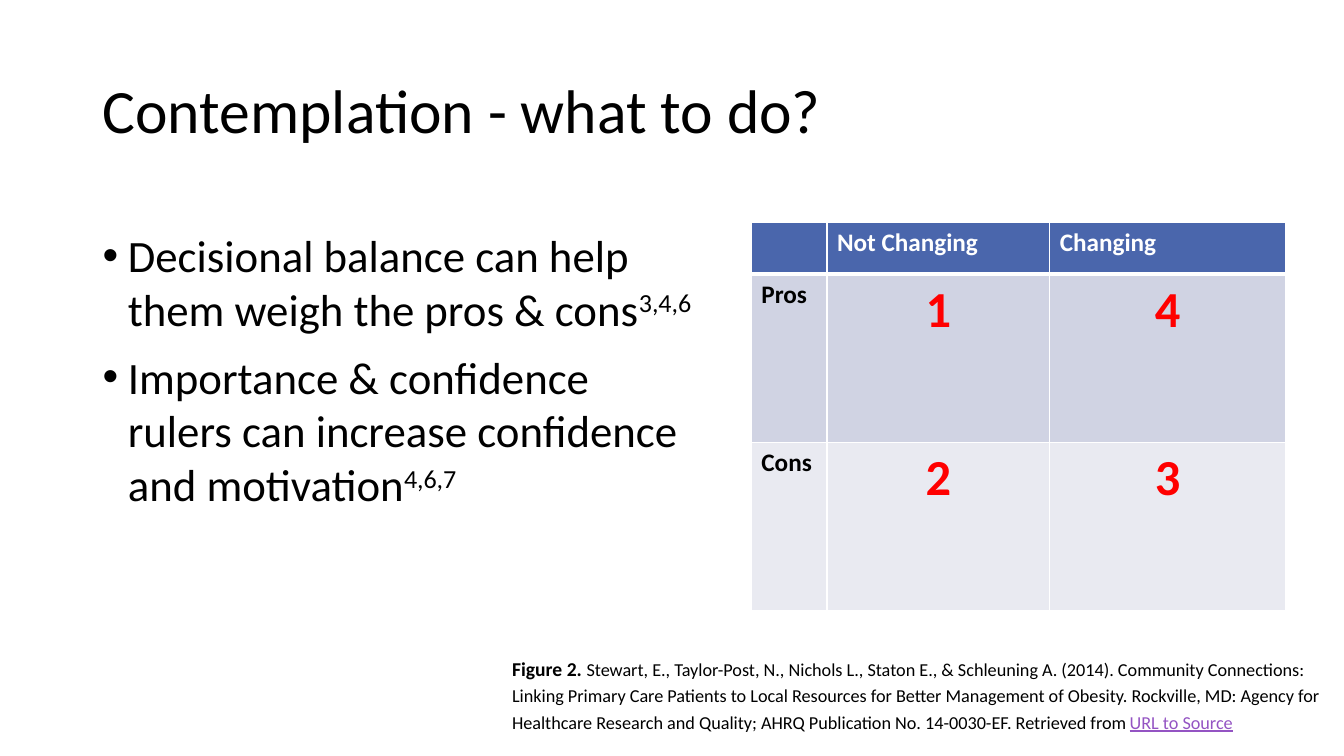
import pptx
import pptx.util
import pptx.dml.color
import pptx.enum.text
import pptx.oxml
import pptx.oxml.ns
from lxml import etree

# Content: paragraphs are lists of (text, style) spans
TITLE = [[("Contemplation - what to do?", "title")]]
ADVICE = [
    [("Decisional balance can help them weigh the pros & cons", "body"), ("3,4,6", "reference")],
    [("Importance & confidence rulers can increase confidence and motivation", "body"),
     ("4,6,7", "reference")],
]
CAPTION = [[
    ("Figure 2. ", "figure"),
    ("Stewart, E., Taylor-Post, N., Nichols L., Staton E., & Schleuning A. (2014). "
     "Community Connections: Linking Primary Care Patients to Local Resources for Better "
     "Management of Obesity. Rockville, MD: Agency for Healthcare Research and Quality; "
     "AHRQ Publication No. 14-0030-EF. Retrieved from ", "caption"),
    ("URL to Source", "source"),
]]
BALANCE = [
    ["", "Not Changing", "Changing"],
    ["Pros", "1", "4"],
    ["Cons", "2", "3"],
]

# Theme: font formats by style, and table colours
THEME = {
    "font": "Calibri",
    "styles": {
        "title": {"size": 44, "color": "000000"},
        "body": {"size": 32, "color": "000000"},
        "reference": {"size": 32, "color": "000000", "baseline": 30},
        "figure": {"size": 14, "color": "000000", "bold": True},
        "caption": {"size": 13, "color": "000000"},
        "source": {"size": 13, "color": "9454C3", "underline": True},
        "header": {"size": 18, "color": "FFFFFF", "bold": True},
        "label": {"size": 18, "color": "000000", "bold": True},
        "rank": {"size": 36, "color": "FF0000", "bold": True},
    },
    "row_fills": ["4A66AC", "D0D3E3", "E9EAF1"],
    "border": "FFFFFF",
}

# Layout: left, top, width, height as percent of the slide
WIDTH, HEIGHT = pptx.util.Inches(13.33), pptx.util.Inches(7.5)
AREAS = {
    "title": (6.9, 5.33, 86.25, 19.33),
    "advice": (6.9, 29.47, 45.9, 60.67),
    "balance": (55.9, 29.47, 39.76, 51.33),
    "caption": (37.36, 85.6, 62.64, 13.33),
}
COLUMN_WEIGHTS = (0.75, 2.21, 2.34)
ROW_WEIGHTS = (0.51, 1.67, 1.67)
BULLET_INDENT = pptx.util.Inches(0.25)
ANCHOR = pptx.enum.text.MSO_ANCHOR
ALIGN = pptx.enum.text.PP_ALIGN


def area(name):
    return [int(side * share / 100)
            for side, share in zip((WIDTH, HEIGHT) * 2, AREAS[name])]


def rgb(value):
    return pptx.dml.color.RGBColor.from_string(value)


def add_span(para, text, style):
    span = para.add_run()
    span.text = text
    look = THEME["styles"][style]
    formats = {
        "name": THEME["font"],
        "size": pptx.util.Pt(look["size"]),
        "bold": look.get("bold", False),
        "underline": look.get("underline", False),
    }
    for key, value in formats.items():
        setattr(span.font, key, value)
    span.font.color.rgb = rgb(look["color"])
    if "baseline" in look:
        span.font._element.set("baseline", str(look["baseline"] * 1000))


def add_bullet(para):
    properties = para._p.get_or_add_pPr()
    properties.set("marL", str(BULLET_INDENT))
    properties.set("indent", str(-BULLET_INDENT))
    etree.SubElement(properties, pptx.oxml.ns.qn("a:buFont")).set("typeface", "Arial")
    etree.SubElement(properties, pptx.oxml.ns.qn("a:buChar")).set("char", "•")


def add_text(page, name, paragraphs, anchor=ANCHOR.TOP, spacing=1.0, bulleted=False):
    frame = page.shapes.add_textbox(*area(name)).text_frame
    frame.word_wrap = True
    frame.vertical_anchor = anchor
    for index, spans in enumerate(paragraphs):
        para = frame.add_paragraph() if index else frame.paragraphs[0]
        if bulleted:
            add_bullet(para)
        para.line_spacing = spacing
        if index:
            para.space_before = pptx.util.Pt(10)
        for text, style in spans:
            add_span(para, text, style)


def set_borders(cell, widths):
    properties = cell._tc.get_or_add_tcPr()
    for position, (side, width) in enumerate(widths.items()):
        properties.insert(position, pptx.oxml.parse_xml(
            f'<a:ln{side} {pptx.oxml.ns.nsdecls("a")} w="{pptx.util.Pt(width)}">'
            f'<a:solidFill><a:srgbClr val="{THEME["border"]}"/></a:solidFill></a:ln{side}>'))


def add_balance(page):
    left, top, width, height = area("balance")
    table = page.shapes.add_table(
        len(BALANCE), len(BALANCE[0]), left, top, width, height).table
    for column, weight in zip(table.columns, COLUMN_WEIGHTS):
        column.width = int(width * weight / sum(COLUMN_WEIGHTS))
    for row, weight in zip(table.rows, ROW_WEIGHTS):
        row.height = int(height * weight / sum(ROW_WEIGHTS))
    for r, texts in enumerate(BALANCE):
        for c, text in enumerate(texts):
            cell = table.cell(r, c)
            cell.fill.solid()
            cell.fill.fore_color.rgb = rgb(THEME["row_fills"][r])
            # The rule under the header row is heavier
            set_borders(cell, {"L": 1, "R": 1, "T": 3 if r == 1 else 1, "B": 3 if r == 0 else 1})
            style = "header" if r == 0 else "label" if c == 0 else "rank"
            para = cell.text_frame.paragraphs[0]
            para.alignment = ALIGN.CENTER if style == "rank" else ALIGN.LEFT
            if text:
                add_span(para, text, style)


def main():
    deck = pptx.Presentation()
    deck.slide_width, deck.slide_height = WIDTH, HEIGHT
    page = deck.slides.add_slide(deck.slide_layouts[6])
    add_text(page, "title", TITLE, anchor=ANCHOR.MIDDLE, spacing=0.9)
    add_text(page, "advice", ADVICE, bulleted=True)
    add_balance(page)
    add_text(page, "caption", CAPTION, spacing=1.2)
    deck.save("out.pptx")


if __name__ == "__main__":
    main()
